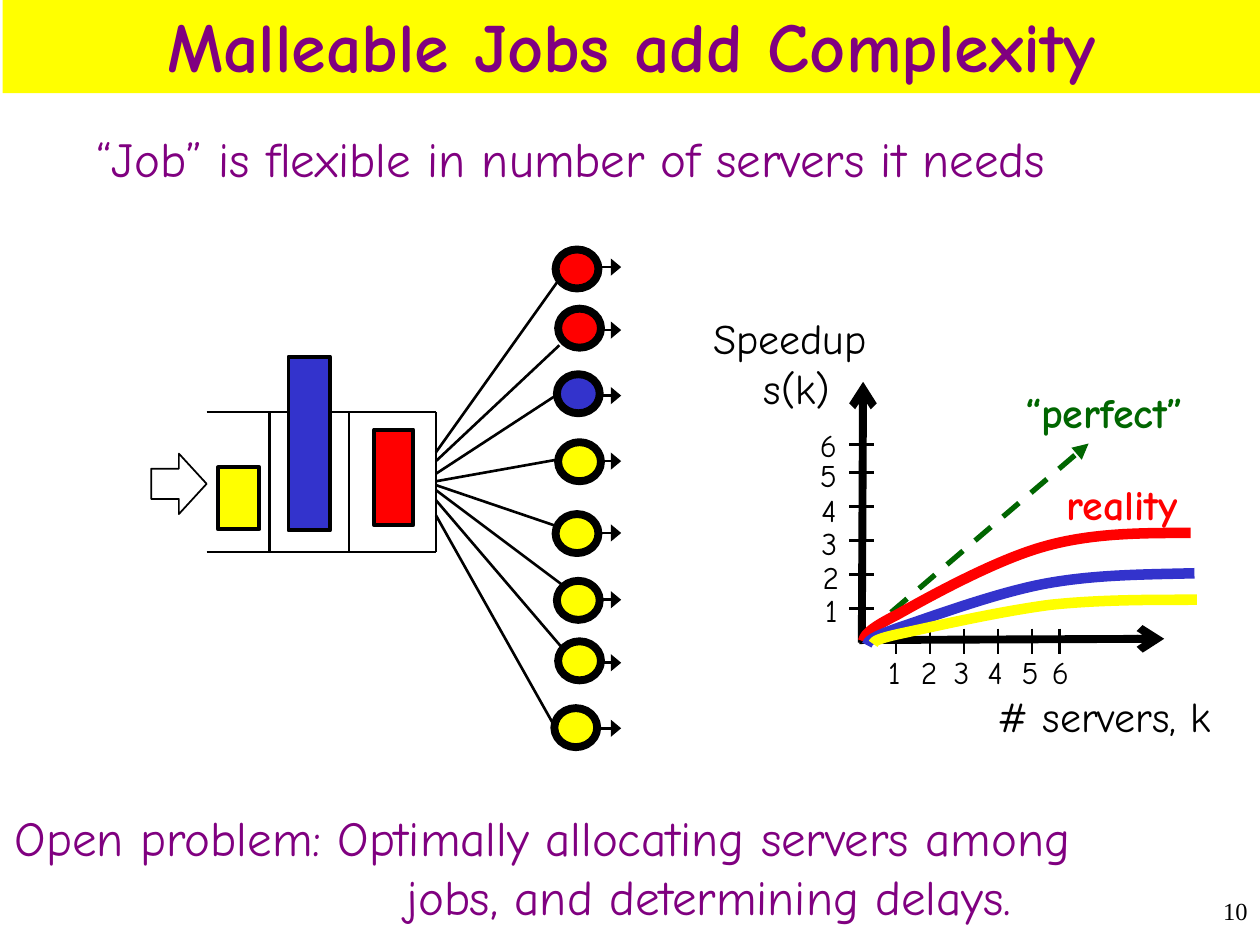
from lxml import etree
from pptx import Presentation
from pptx import util as u
from pptx.dml.color import RGBColor
from pptx.enum import dml, shapes, text
from pptx.oxml.ns import qn

BLACK, YELLOW, RED, BLUE = "000000", "FFFF00", "FF0000", "3333CC"
PURPLE, GREEN = "800080", "006600"


def colour(code):
    return RGBColor.from_string(code)


def write(para, words, size=24, color=BLACK, font="Comic Neue", bold=False):
    """Add formatted text to a paragraph."""
    span = para.add_run()
    span.text = words
    span.font.size = u.Pt(size)
    span.font.name = font
    span.font.bold = bold
    span.font.color.rgb = colour(color)


def smooth(stroke):
    """Turn each three straight segments into one cubic curve."""
    outline = next(stroke._element.iter(qn("a:path")))
    lines = outline.findall(qn("a:lnTo"))
    for i in range(0, len(lines), 3):
        cubic = etree.SubElement(outline, qn("a:cubicBezTo"))
        for segment in lines[i:i + 3]:
            cubic.append(segment[0])
            outline.remove(segment)


class Sketch:
    """Draws styled elements on the current page."""

    def __init__(self, page):
        self.page = page

    def outline(self, item, color, width):
        item.line.color.rgb = colour(color)
        item.line.width = u.Pt(width)

    def shape(self, kind, at, fill=None, line=BLACK, width=1.5):
        box = self.page.shapes.add_shape(kind, *map(u.Inches, at))
        box.shadow.inherit = False
        if fill:
            box.fill.solid()
            box.fill.fore_color.rgb = colour(fill)
        else:
            box.fill.background()
        if line:
            self.outline(box, line, width)
        else:
            box.line.fill.background()
        return box

    def line(self, start, end, color=BLACK, width=1.5, head=None, head_width="med",
             dash=False):
        link = self.page.shapes.add_connector(
            shapes.MSO_CONNECTOR.STRAIGHT, *map(u.Inches, start + end))
        self.outline(link, color, width)
        if dash:
            link.line.dash_style = dml.MSO_LINE.DASH
        if head:
            etree.SubElement(link.line._get_or_add_ln(), qn("a:tailEnd"),
                             type=head, w=head_width)
        etree.SubElement(link._element.spPr, qn("a:effectLst"))

    def curve(self, points, color, width=6):
        start, *others = [tuple(map(u.Inches, point)) for point in points]
        builder = self.page.shapes.build_freeform(*start)
        builder.add_line_segments(others, close=False)
        stroke = builder.convert_to_shape()
        smooth(stroke)
        stroke.shadow.inherit = False
        stroke.fill.background()
        self.outline(stroke, color, width)

    def text(self, at, *lines, align=text.PP_ALIGN.LEFT, wrap=False, indents=(),
             anchor=text.MSO_ANCHOR.TOP, **style):
        box = self.page.shapes.add_textbox(*map(u.Inches, at))
        self.fill_text(box.text_frame, lines, align, wrap, anchor, **style)
        for para, indent in zip(box.text_frame.paragraphs, indents):
            para._p.get_or_add_pPr().set("marL", str(u.Inches(indent)))

    def fill_text(self, frame, lines, align, wrap, anchor, **style):
        frame.word_wrap = wrap
        frame.vertical_anchor = anchor
        for i, words in enumerate(lines):
            para = frame.add_paragraph() if i else frame.paragraphs[0]
            para.alignment = align
            write(para, words, **style)


def draw_queue(sketch):
    # Waiting room and arrivals
    top, bottom, left, right = 3.27, 4.38, 1.64, 3.46
    for y in (top, bottom):
        sketch.line((left, y), (right, y))
    for x in (2.14, 2.77, right):
        sketch.line((x, top), (x, bottom))
    sketch.shape(shapes.MSO_SHAPE.RIGHT_ARROW, (1.2, 3.6, 0.44, 0.48), width=1)

    # Links from the queue to each server
    links = [(3.59, 4.45, 2.2), (3.66, 4.44, 2.74), (3.76, 4.41, 3.14),
             (3.82, 4.41, 3.65), (3.85, 4.4, 4.17), (3.89, 4.46, 4.64),
             (3.97, 4.46, 5.14), (4.09, 4.41, 5.78)]
    for start_y, x, y in links:
        sketch.line((right, start_y), (x, y))

    # Servers and their departures
    servers = [(4.41, 1.98, 2.12, RED), (4.43, 2.45, 2.62, RED),
               (4.42, 2.97, 3.14, BLUE), (4.43, 3.51, 3.66, YELLOW),
               (4.41, 4.08, 4.23, YELLOW), (4.42, 4.61, 4.76, YELLOW),
               (4.43, 5.09, 5.26, YELLOW), (4.4, 5.62, 5.78, YELLOW)]
    for x, y, exit_y, fill in servers:
        sketch.line((4.76, exit_y), (4.93, exit_y), head="triangle", head_width="lg")
        sketch.shape(shapes.MSO_SHAPE.OVAL, (x, y, 0.34, 0.31), fill, width=4.5)

    # Jobs
    for at, fill in [((2.97, 3.41, 0.31, 0.76), RED),
                     ((2.29, 2.83, 0.33, 1.38), BLUE),
                     ((1.73, 3.71, 0.33, 0.49), YELLOW)]:
        sketch.shape(shapes.MSO_SHAPE.RECTANGLE, at, fill, width=2.25)


def draw_speedup(sketch):
    # Axes and their titles
    sketch.line((6.84, 5.1), (6.85, 3.03), width=4.5, head="arrow")
    sketch.line((6.82, 5.08), (9.24, 5.07), width=4.5, head="arrow")
    sketch.text((5.18, 2.43, 2.29, 0.86), "Speedup ", "s(k)",
                align=text.PP_ALIGN.CENTER, wrap=True)
    sketch.text((7.82, 5.43, 2.06, 0.48), "# servers, k")

    # Ticks on both axes
    for offset in (0, 0.27, 0.54, 0.81, 1.08, 1.3):
        x, y = 7.11 + offset, 4.83 - offset
        sketch.line((6.74, y), (6.94, y))
        sketch.line((x, 4.99), (x, 5.19))

    # Numbers: left and top on the upright axis, left on the flat axis
    numbers = [(6.45, 4.64, 6.95), (6.43, 4.38, 7.21), (6.42, 4.11, 7.47),
               (6.42, 3.85, 7.74), (6.41, 3.57, 8.01), (6.41, 3.33, 8.25)]
    for number, (left, top, flat_left) in enumerate(numbers, 1):
        width = 0.3 if number == 1 else 0.34
        sketch.text((left, top, width, 0.38), str(number), size=18)
        sketch.text((flat_left, 5.13, width, 0.38), str(number), size=18)

    # Speedup curves
    sketch.line((6.85, 5.05), (8.64, 3.52), GREEN, 3, "triangle", dash=True)
    sketch.text((8.04, 3.02, 1.71, 0.5), "“perfect”", color=GREEN, bold=True)
    sketch.curve([(6.85, 5.09), (6.86, 5.05), (6.88, 5), (7.12, 4.88),
                  (7.35, 4.75), (7.89, 4.45), (8.28, 4.34),
                  (8.66, 4.23), (9.06, 4.23), (9.45, 4.23)], RED)
    sketch.text((8.37, 3.75, 1.27, 0.5), "reality", color=RED, bold=True)
    sketch.curve([(6.88, 5.12), (6.89, 5.09), (6.91, 5.06), (7.14, 4.98),
                  (7.38, 4.9), (7.92, 4.7), (8.31, 4.63),
                  (8.7, 4.56), (9.09, 4.56), (9.48, 4.55)], BLUE)
    sketch.curve([(6.93, 5.11), (6.94, 5.09), (6.95, 5.07), (7.19, 5.02),
                  (7.42, 4.97), (7.95, 4.85), (8.34, 4.8),
                  (8.72, 4.76), (9.11, 4.76), (9.5, 4.76)], YELLOW)


def main():
    deck = Presentation()
    deck.slide_width, deck.slide_height = u.Inches(10), u.Inches(7.5)
    sketch = Sketch(deck.slides.add_slide(deck.slide_layouts[6]))

    # Title band
    band = sketch.shape(shapes.MSO_SHAPE.RECTANGLE, (0.02, -0.03, 9.98, 0.77),
                        YELLOW, line=None)
    sketch.fill_text(band.text_frame, ["Malleable Jobs add Complexity"],
                     text.PP_ALIGN.CENTER, True, text.MSO_ANCHOR.TOP,
                     size=40, color=PURPLE, bold=True)

    draw_queue(sketch)
    draw_speedup(sketch)

    # Statements and page number
    sketch.text((0.67, 0.97, 8.69, 0.57),
                "“Job” is flexible in number of servers it needs",
                wrap=True, size=28, color=PURPLE)
    sketch.text((0.02, 6.36, 9.31, 1.04),
                "Open problem: Optimally allocating servers among",
                "jobs, and determining delays.",
                wrap=True, indents=(0, 3.11), size=28, color=PURPLE)
    sketch.text((7.17, 7, 2.83, 0.46), "10", align=text.PP_ALIGN.RIGHT, wrap=True,
                anchor=text.MSO_ANCHOR.MIDDLE, size=14, font="Times New Roman")

    deck.save("out.pptx")


if __name__ == "__main__":
    main()
